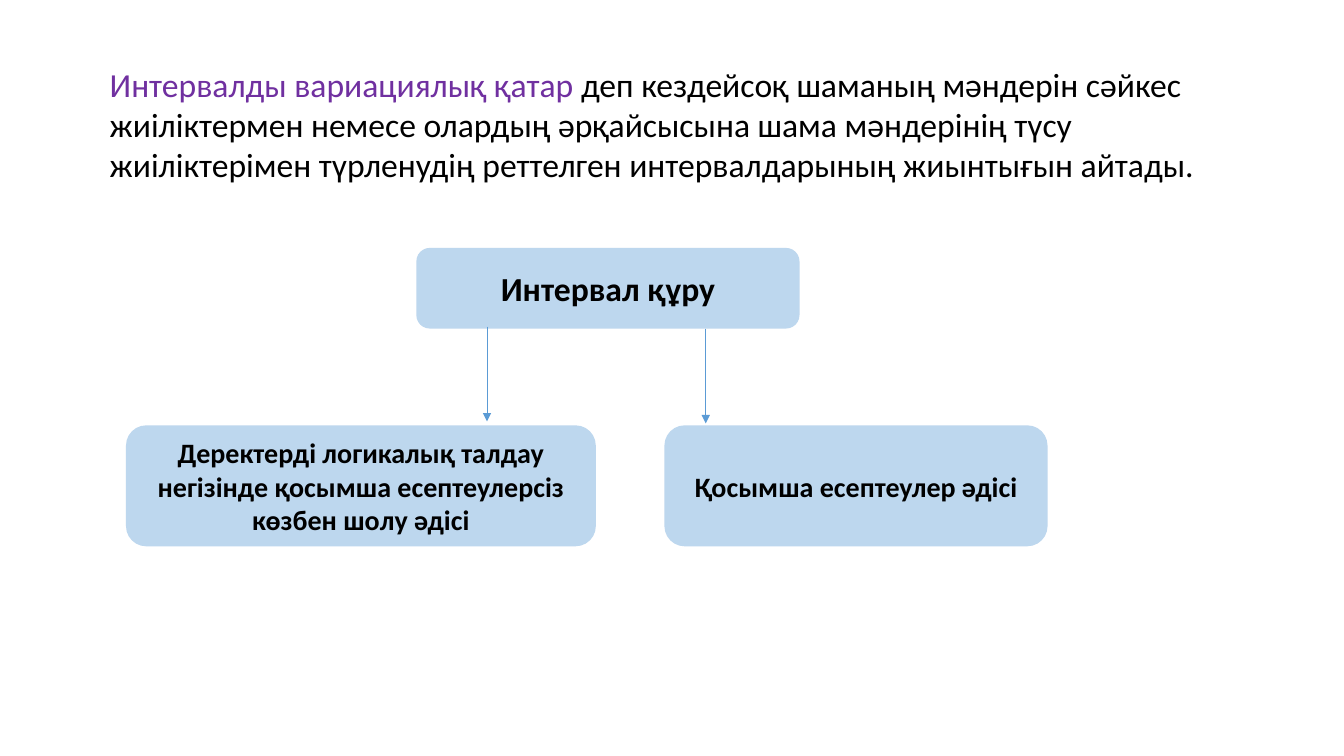
from dataclasses import dataclass

from lxml.etree import SubElement
from pptx import Presentation
from pptx.dml.color import RGBColor
from pptx.enum.shapes import MSO_CONNECTOR, MSO_SHAPE
from pptx.enum.text import MSO_ANCHOR, MSO_AUTO_SIZE, PP_ALIGN
from pptx.oxml.ns import qn
from pptx.slide import Slide
from pptx.util import Inches, Pt

PURPLE = RGBColor(0x70, 0x30, 0xA0)
BLACK = RGBColor(0x00, 0x00, 0x00)
PALE_BLUE = RGBColor(0xBD, 0xD7, 0xEE)
BLUE = RGBColor(0x5B, 0x9B, 0xD5)
FONT = "Calibri"
METHOD_TOP = 4.22
METHOD_HEIGHT = 1.2
ARROW_LENGTH = 0.94


@dataclass(frozen=True)
class Node:
    text: str
    left: float
    top: float
    width: float
    height: float
    size: int


@dataclass(frozen=True)
class Arrow:
    x: float
    top: float


NODES = [
    Node("Интервал құру", 4.13, 2.46, 3.8, 0.8, 24),
    Node(
        "Деректерді логикалық талдау негізінде қосымша есептеулерсіз көзбен шолу әдісі",
        1.25, METHOD_TOP, 4.66, METHOD_HEIGHT, 20,
    ),
    Node("Қосымша есептеулер әдісі", 6.59, METHOD_TOP, 3.8, METHOD_HEIGHT, 20),
]
ARROWS = [Arrow(4.83, 3.24), Arrow(7, 3.26)]
DEFINITION = [
    ("Интервалды вариациялық қатар ", PURPLE),
    (
        "деп кездейсоқ шаманың мәндерін сәйкес жиіліктермен немесе олардың "
        "әрқайсысына шама мәндерінің түсу жиіліктерімен түрленудің реттелген "
        "интервалдарының жиынтығын айтады.",
        BLACK,
    ),
]


def add_definition(page: Slide) -> None:
    box = page.shapes.add_textbox(Inches(0.99), Inches(0.58), Inches(11.13), Inches(1.72))
    frame = box.text_frame
    frame.word_wrap = True
    frame.auto_size = MSO_AUTO_SIZE.SHAPE_TO_FIT_TEXT
    para = frame.paragraphs[0]
    para.font.name = FONT
    para.font.size = Pt(24)
    for text, color in DEFINITION:
        span = para.add_run()
        span.text = text
        span.font.color.rgb = color


def add_node(page: Slide, node: Node) -> None:
    box = page.shapes.add_shape(
        MSO_SHAPE.ROUNDED_RECTANGLE,
        Inches(node.left), Inches(node.top), Inches(node.width), Inches(node.height),
    )
    box.shadow.inherit = False
    box.fill.solid()
    box.fill.fore_color.rgb = PALE_BLUE
    box.line.fill.background()
    frame = box.text_frame
    frame.word_wrap = True
    frame.vertical_anchor = MSO_ANCHOR.MIDDLE
    para = frame.paragraphs[0]
    para.text = node.text
    para.alignment = PP_ALIGN.CENTER
    para.font.name = FONT
    para.font.size = Pt(node.size)
    para.font.bold = True
    para.font.color.rgb = BLACK


def add_arrow(page: Slide, arrow: Arrow) -> None:
    connector = page.shapes.add_connector(
        MSO_CONNECTOR.STRAIGHT,
        Inches(arrow.x), Inches(arrow.top),
        Inches(arrow.x), Inches(arrow.top + ARROW_LENGTH),
    )
    connector.line.color.rgb = BLUE
    connector.line.width = Pt(0.5)
    SubElement(connector.line._get_or_add_ln(), qn("a:tailEnd"), type="triangle")
    SubElement(connector._element.spPr, qn("a:effectLst"))


def main() -> None:
    deck = Presentation()
    deck.slide_width = Inches(13.33)
    deck.slide_height = Inches(7.5)
    page = deck.slides.add_slide(deck.slide_layouts[6])
    add_definition(page)
    for node in NODES:
        add_node(page, node)
    for arrow in ARROWS:
        add_arrow(page, arrow)
    deck.save("out.pptx")


if __name__ == "__main__":
    main()
